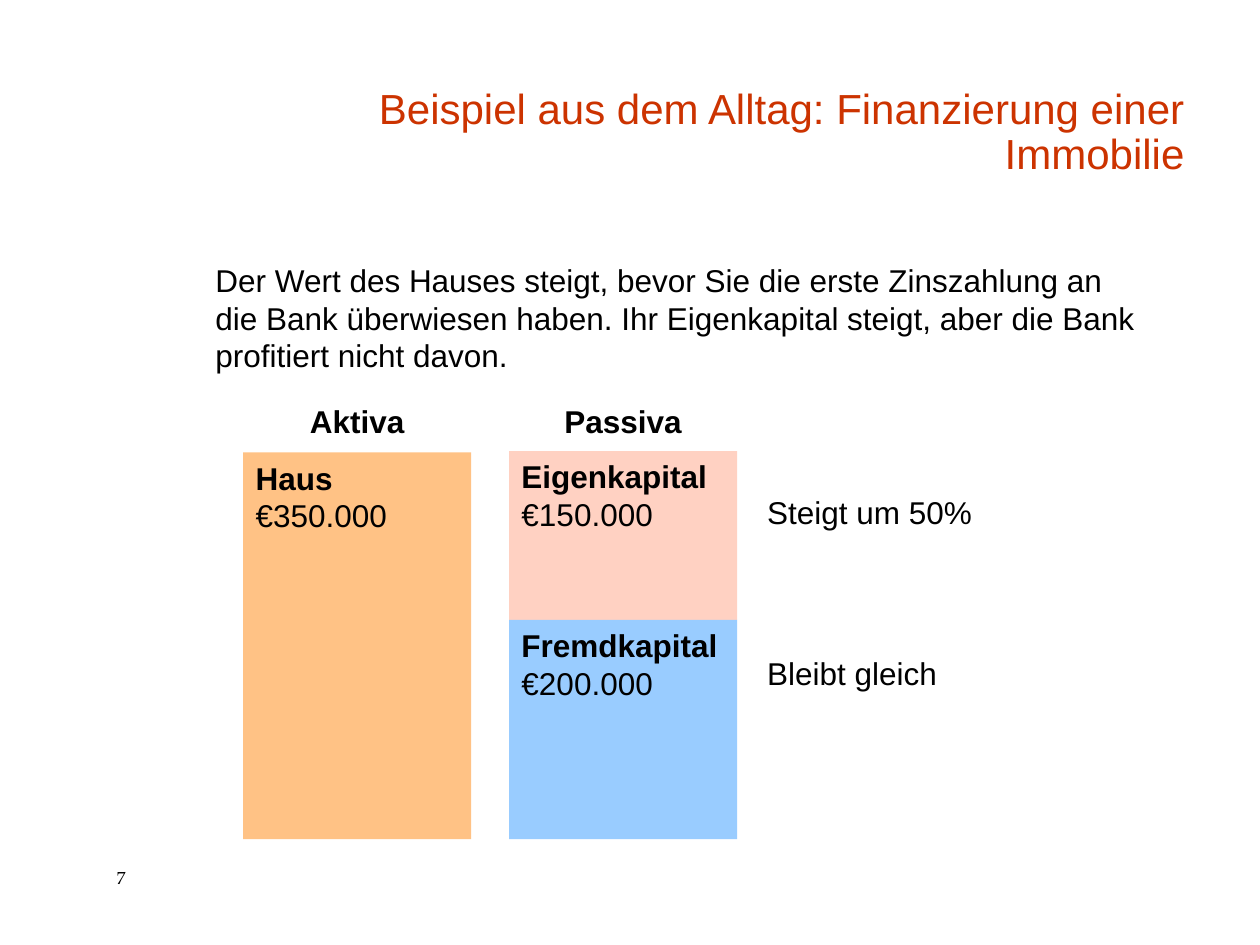
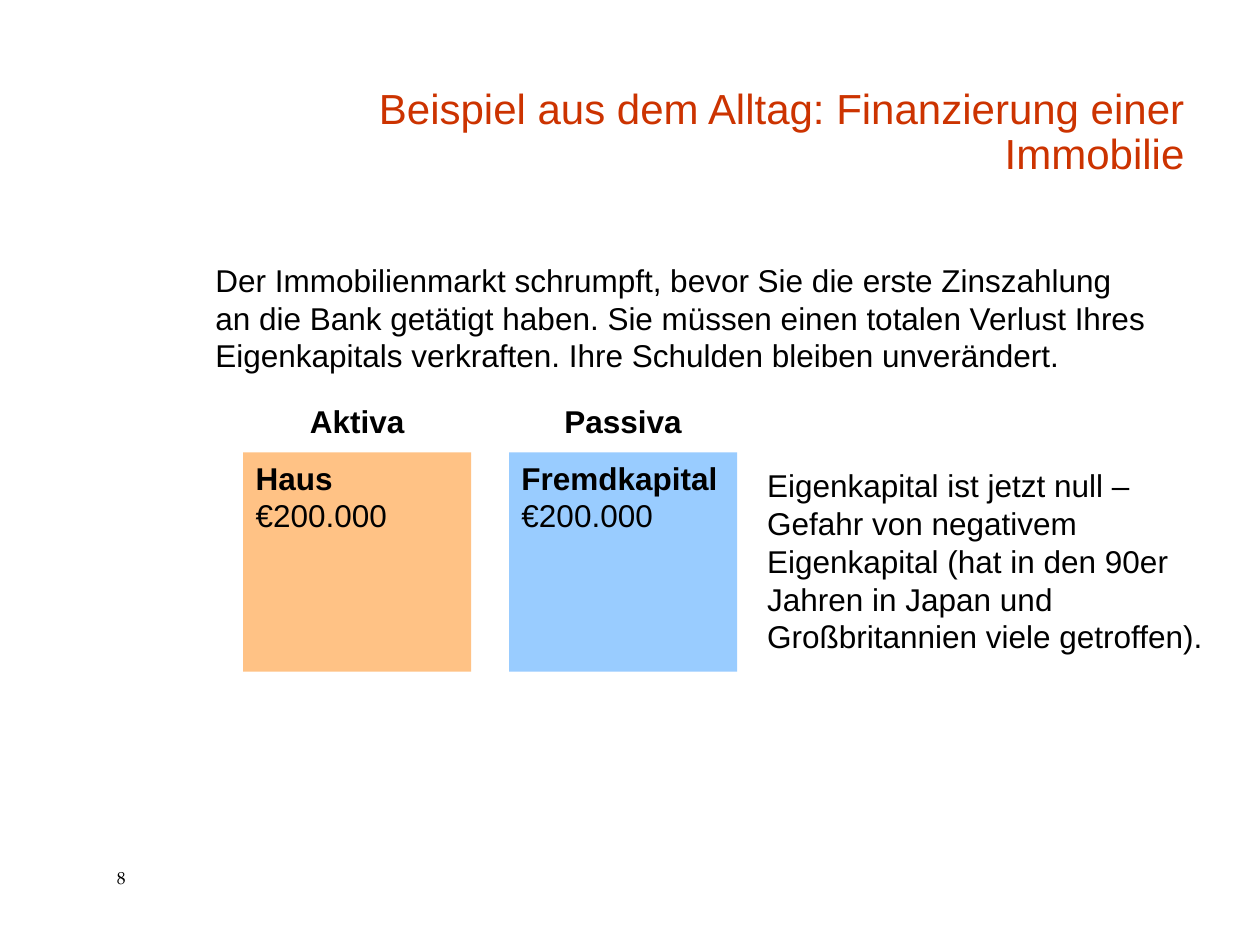
from dataclasses import dataclass

from lxml import etree
from pptx import Presentation
from pptx.dml.color import RGBColor as RGB
from pptx.enum.shapes import MSO_SHAPE as SHAPE
from pptx.enum.text import MSO_ANCHOR as ANCHOR, MSO_AUTO_SIZE as AUTO, PP_ALIGN as ALIGN
from pptx.oxml.ns import qn
from pptx.util import Inches, Pt


@dataclass(frozen=True)
class Theme:
    font: str = "Arial"
    number_font: str = "TeX Gyre Pagella"
    title_size: int = 24
    body_size: int = 18
    number_size: int = 10
    text: str = "000000"
    title: str = "CC3300"
    assets: str = "FFC285"
    equity: str = "FFD1C2"
    debt: str = "99CCFF"


THEME = Theme()
WIDTH, HEIGHT = Inches(10), Inches(7.5)

# Grid, in percent of the slide's width and height
ASSETS_X, LIABILITIES_X, NOTE_X = 19.3, 40.4, 59.9
BAR_W, BAR_TOP = 18.1, 47.87
DEBT_H, EQUITY_H, HOUSE_H = 23.2, 17.87, 40.93
HEAD_TOP, HEAD_H = 41.87, 5.87
NOTE_H = 10.27
TITLE = "Beispiel aus dem Alltag: Finanzierung einer Immobilie"


def area(x, y, w, h):
    """Turn percentages of the slide into left, top, width, height."""
    return (int(WIDTH * x / 100), int(HEIGHT * y / 100),
            int(WIDTH * w / 100), int(HEIGHT * h / 100))


def place(sp, box):
    sp.left, sp.top, sp.width, sp.height = area(*box)


def write(sp, text, size=THEME.body_size, color=THEME.text, font=THEME.font,
          bold=False, align=ALIGN.LEFT, anchor=ANCHOR.TOP, wrap=True):
    tf = sp.text_frame
    tf.text = text
    tf.word_wrap = wrap
    tf.auto_size = AUTO.NONE
    tf.vertical_anchor = anchor
    for p in tf.paragraphs:
        p.alignment = align
        p.space_before = Pt(0)
        for r in p.runs:
            r.font.name, r.font.size, r.font.bold = font, Pt(size), bold
            r.font.color.rgb = RGB.from_string(color)
    return tf


def add_text(slide, box, text, **style):
    return write(slide.shapes.add_textbox(*area(*box)), text, **style)


def add_heading(slide, column, text, width):
    """Centre a bold heading over a balance sheet column."""
    x = column + (BAR_W - width) / 2
    add_text(slide, (x, HEAD_TOP, width, HEAD_H), text,
             bold=True, align=ALIGN.CENTER, wrap=False)


def add_bar(slide, column, top, height, name, amount, color):
    sp = slide.shapes.add_shape(SHAPE.RECTANGLE, *area(column, top, BAR_W, height))
    sp.shadow.inherit = False
    sp.fill.solid()
    sp.fill.fore_color.rgb = RGB.from_string(color)
    sp.line.fill.background()
    tf = write(sp, f"{name}\n{amount}")
    tf.paragraphs[0].runs[0].font.bold = True


def add_note(slide, top, text, width=35.2):
    add_text(slide, (NOTE_X, top, width, NOTE_H), text)


def add_balance_slide(prs, number, statement):
    """Add the title, statement, column headings and page number."""
    slide = prs.slides.add_slide(prs.slide_layouts[1])
    title, body = slide.shapes.title, slide.placeholders[1]

    place(title, (20.9, 5.6, 74.1, 14))
    tf = write(title, TITLE, THEME.title_size, THEME.title,
               align=ALIGN.RIGHT, anchor=ANCHOR.BOTTOM)
    tf.paragraphs[0].line_spacing = 0.9

    place(body, (16.1, 26.93, 75.8, 64.27))
    p = write(body, statement).paragraphs[0]
    pPr = p._p.get_or_add_pPr()
    pPr.set("marL", "0")
    pPr.set("indent", "0")
    etree.SubElement(pPr, qn("a:buNone"))

    add_heading(slide, ASSETS_X, "Aktiva", 9.6)
    add_heading(slide, LIABILITIES_X, "Passiva", 11.5)
    add_text(slide, (8.3, 91.07, 6.7, 3.6), str(number),
             size=THEME.number_size, font=THEME.number_font)
    return slide


def main():
    prs = Presentation()
    prs.slide_width, prs.slide_height = WIDTH, HEIGHT

    # Rising house value
    s = add_balance_slide(
        prs, 7,
        "Der Wert des Hauses steigt, bevor Sie die erste Zinszahlung an die Bank "
        "überwiesen haben. Ihr Eigenkapital steigt, aber die Bank profitiert nicht davon.")
    equity_top = BAR_TOP + HOUSE_H - DEBT_H - EQUITY_H
    add_bar(s, ASSETS_X, BAR_TOP, HOUSE_H, "Haus", "€350.000", THEME.assets)
    add_bar(s, LIABILITIES_X, equity_top, EQUITY_H, "Eigenkapital", "€150.000", THEME.equity)
    add_bar(s, LIABILITIES_X, equity_top + EQUITY_H, DEBT_H,
            "Fremdkapital", "€200.000", THEME.debt)
    add_note(s, 51.47, "Steigt um 50%")
    add_note(s, 68.53, "Bleibt gleich")

    # Shrinking market
    s = add_balance_slide(
        prs, 8,
        "Der Immobilienmarkt schrumpft, bevor Sie die erste Zinszahlung an die Bank "
        "getätigt haben. Sie müssen einen totalen Verlust Ihres Eigenkapitals "
        "verkraften. Ihre Schulden bleiben unverändert.")
    add_bar(s, ASSETS_X, BAR_TOP, DEBT_H, "Haus", "€200.000", THEME.assets)
    add_bar(s, LIABILITIES_X, BAR_TOP, DEBT_H, "Fremdkapital", "€200.000", THEME.debt)
    add_note(s, 48.67,
             "Eigenkapital ist jetzt null – Gefahr von negativem Eigenkapital (hat in "
             "den 90er Jahren in Japan und Großbritannien viele getroffen).", width=38.1)

    prs.save("out.pptx")


if __name__ == "__main__":
    main()
